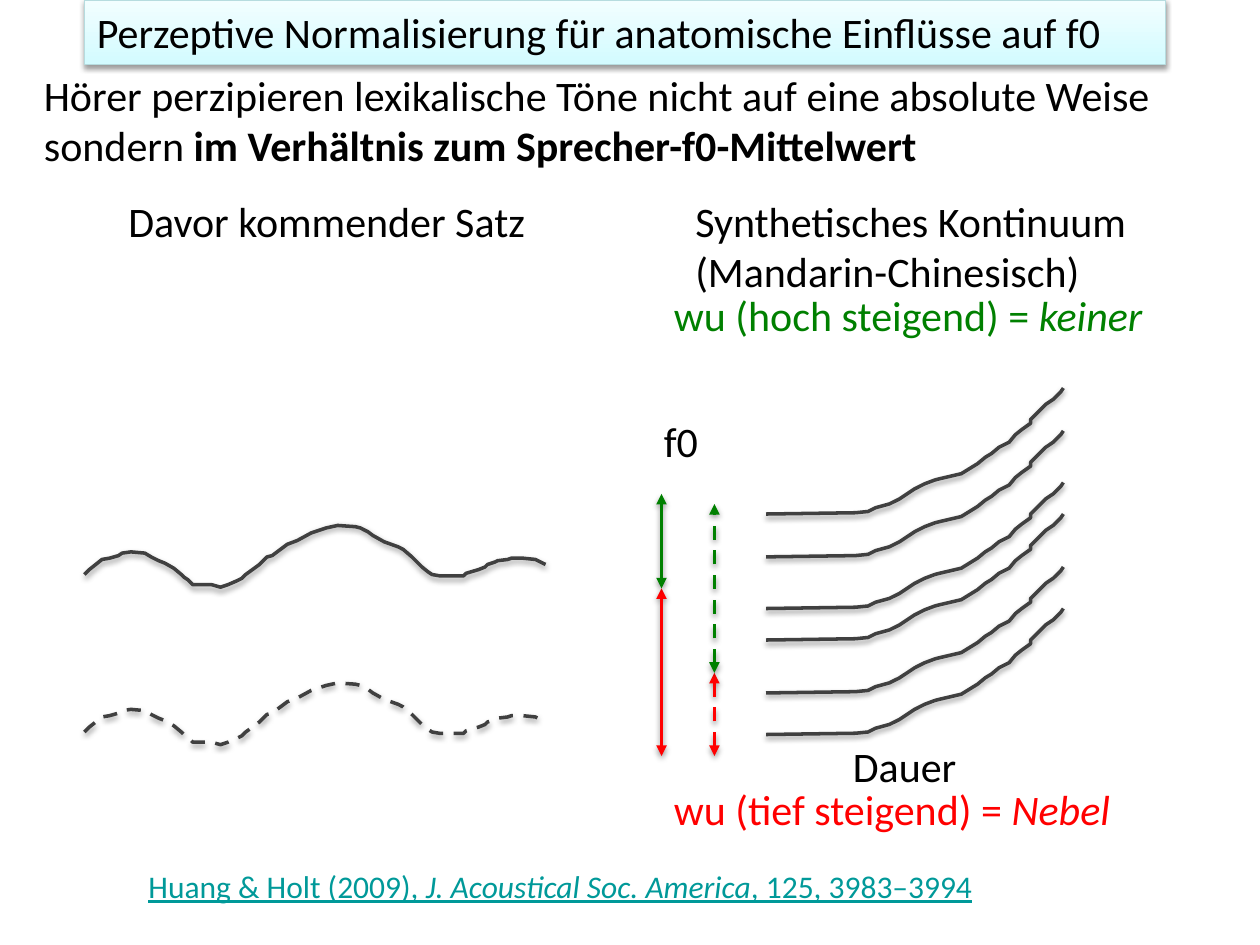
from lxml import etree
from pptx import Presentation
from pptx.dml.color import RGBColor
from pptx.enum.dml import MSO_LINE_DASH_STYLE as Dash
from pptx.enum.shapes import MSO_CONNECTOR as Connector, MSO_SHAPE as Shape
from pptx.enum.text import MSO_ANCHOR as Anchor, MSO_AUTO_SIZE as AutoSize, PP_ALIGN as Align
from pptx.oxml.ns import qn
from pptx.util import Inches, Pt

BLACK, GRAY, GREEN, RED, TEAL = "000000", "404040", "008000", "FF0000", "009999"

# Pitch contours: x and y in inches, measured from the left and top of the curve
SENTENCE = [
    (0, .39), (.04, .35), (.14, .27), (.2, .26), (.27, .24), (.3, .22), (.37, .21),
    (.48, .22), (.53, .25), (.57, .27), (.59, .28), (.64, .3), (.71, .34), (.77, .39),
    (.79, .41), (.82, .43), (.86, .47), (1.01, .47), (1.08, .49), (1.14, .47),
    (1.21, .44), (1.25, .42), (1.28, .39), (1.39, .31), (1.45, .25), (1.49, .24),
    (1.53, .21), (1.61, .15), (1.69, .12), (1.8, .06), (1.92, .02), (2.01, 0),
    (2.15, .01), (2.19, .02), (2.25, .05), (2.29, .08), (2.38, .13), (2.49, .17),
    (2.53, .19), (2.6, .25), (2.63, .28), (2.68, .33), (2.73, .37), (2.76, .39),
    (2.82, .4), (3.01, .4), (3.03, .38), (3.13, .35), (3.18, .33), (3.2, .31),
    (3.26, .29), (3.28, .28), (3.36, .27), (3.39, .26), (3.48, .26), (3.58, .27),
    (3.64, .3), (3.66, .31),
]
RISING_TONE = [
    (0, 1), (.71, .99), (.81, .98), (.87, .95), (.98, .92), (1.06, .88), (1.18, .8),
    (1.26, .76), (1.34, .73), (1.38, .72), (1.55, .68), (1.68, .6), (1.74, .55),
    (1.79, .52), (1.85, .47), (1.93, .43), (1.98, .37), (2.03, .33), (2.1, .28),
    (2.1, .25), (2.19, .16), (2.22, .13), (2.28, .09), (2.34, .03), (2.36, 0),
]
TONE_TOPS = [3.08, 3.42, 3.83, 4.08, 4.5, 4.83]


def rgb(color):
    return RGBColor.from_string(color)


def add_shadow(shape):
    effects = etree.SubElement(shape.element.spPr, qn("a:effectLst"))
    shadow = etree.SubElement(effects, qn("a:outerShdw"), blurRad="40000",
                              dist="20000", dir="5400000", rotWithShape="0")
    color = etree.SubElement(shadow, qn("a:srgbClr"), val=BLACK)
    etree.SubElement(color, qn("a:alpha"), val="38000")


def style_line(line, color, width=2, dashed=False):
    line.color.rgb = rgb(color)
    line.width = Pt(width)
    if dashed:
        line.dash_style = Dash.DASH


def write_text(shape, runs, size=24, color=BLACK):
    """Fill a shape with runs given as (text, style), style being "", "b" or "i"."""
    frame = shape.text_frame
    frame.word_wrap = True
    frame.auto_size = AutoSize.SHAPE_TO_FIT_TEXT
    frame.vertical_anchor = Anchor.TOP
    paragraph = frame.paragraphs[0]
    paragraph.alignment = Align.LEFT
    for text, style in runs:
        run = paragraph.add_run()
        run.text = text
        font = run.font
        font.name, font.size, font.color.rgb = "Calibri", Pt(size), rgb(color)
        font.bold, font.italic = style == "b", style == "i"
        if color == TEAL:
            font.underline = True


def add_title(slide, text):
    banner = slide.shapes.add_shape(Shape.RECTANGLE, Inches(0.67), 0,
                                    Inches(8.58), Inches(0.51))
    banner.fill.gradient()
    banner.fill.gradient_angle = 90
    for stop, color in zip(banner.fill.gradient_stops, ("D3FBFF", "F2FEFF")):
        stop.color.rgb = rgb(color)
    style_line(banner.line, "B6DCDF", 0.75)
    add_shadow(banner)
    write_text(banner, [(text, "")])


def add_label(slide, box, runs, **style):
    label = slide.shapes.add_textbox(*map(Inches, box))
    write_text(label, runs, **style)


def add_contour(slide, points, left, top, dashed=False):
    corners = [(Inches(left + x), Inches(top + y)) for x, y in points]
    builder = slide.shapes.build_freeform(*corners[0])
    builder.add_line_segments(corners[1:], close=False)
    contour = builder.convert_to_shape()
    contour.fill.background()
    style_line(contour.line, GRAY, dashed=dashed)
    add_shadow(contour)


def add_range_arrow(slide, x, bottom, top, color, dashed=False):
    arrow = slide.shapes.add_connector(Connector.STRAIGHT, Inches(x), Inches(bottom),
                                       Inches(x), Inches(top))
    style_line(arrow.line, color, dashed=dashed)
    line = arrow.element.spPr.find(qn("a:ln"))
    for end in ("a:headEnd", "a:tailEnd"):
        etree.SubElement(line, qn(end), type="triangle")
    add_shadow(arrow)


def main():
    presentation = Presentation()
    presentation.slide_width, presentation.slide_height = Inches(10), Inches(7.5)
    slide = presentation.slides.add_slide(presentation.slide_layouts[6])

    # Title and statement
    add_title(slide, "Perzeptive Normalisierung für anatomische Einflüsse auf f0")
    add_label(slide, (0.25, 0.5, 9.17, 0.91), [
        ("Hörer perzipieren lexikalische Töne nicht auf eine absolute Weise sondern ", ""),
        ("im Verhältnis zum Sprecher-f0-Mittelwert", "b")])

    # Preceding sentence: low (dashed) and high (solid) f0, with the f0 ranges
    add_label(slide, (0.92, 1.5, 3.5, 0.5), [("Davor kommender Satz", "")])
    for top, x, middle, high, dashed in ((5.42, 5.67, 5.34, 4, True),
                                         (4.17, 5.25, 4.67, 3.92, False)):
        add_contour(slide, SENTENCE, 0.67, top, dashed)
        add_range_arrow(slide, x, 6, middle, RED, dashed)
        add_range_arrow(slide, x, middle, high, GREEN, dashed)

    # Synthetic continuum
    for top in TONE_TOPS:
        add_contour(slide, RISING_TONE, 6.08, top)
    add_label(slide, (5.42, 1.5, 3.83, 0.91),
              [("Synthetisches Kontinuum (Mandarin-Chinesisch)", "")])
    add_label(slide, (5.25, 2.25, 4.58, 0.51),
              [("wu (hoch steigend) = ", ""), ("keiner", "i")], color=GREEN)
    add_label(slide, (5.25, 6.17, 4.33, 0.51),
              [("wu (tief steigend) = ", ""), ("Nebel", "i")], color=RED)
    add_label(slide, (6.67, 5.83, 1.08, 0.51), [("Dauer", "")])
    add_label(slide, (5.17, 3.25, 0.58, 0.51), [("f0", "")])

    # Reference
    add_label(slide, (1.08, 6.83, 8.08, 0.4), [
        ("Huang & Holt (2009), ", ""), ("J. Acoustical Soc. America", "i"),
        (", 125, 3983–3994", "")], size=18, color=TEAL)

    presentation.save("out.pptx")


if __name__ == "__main__":
    main()
